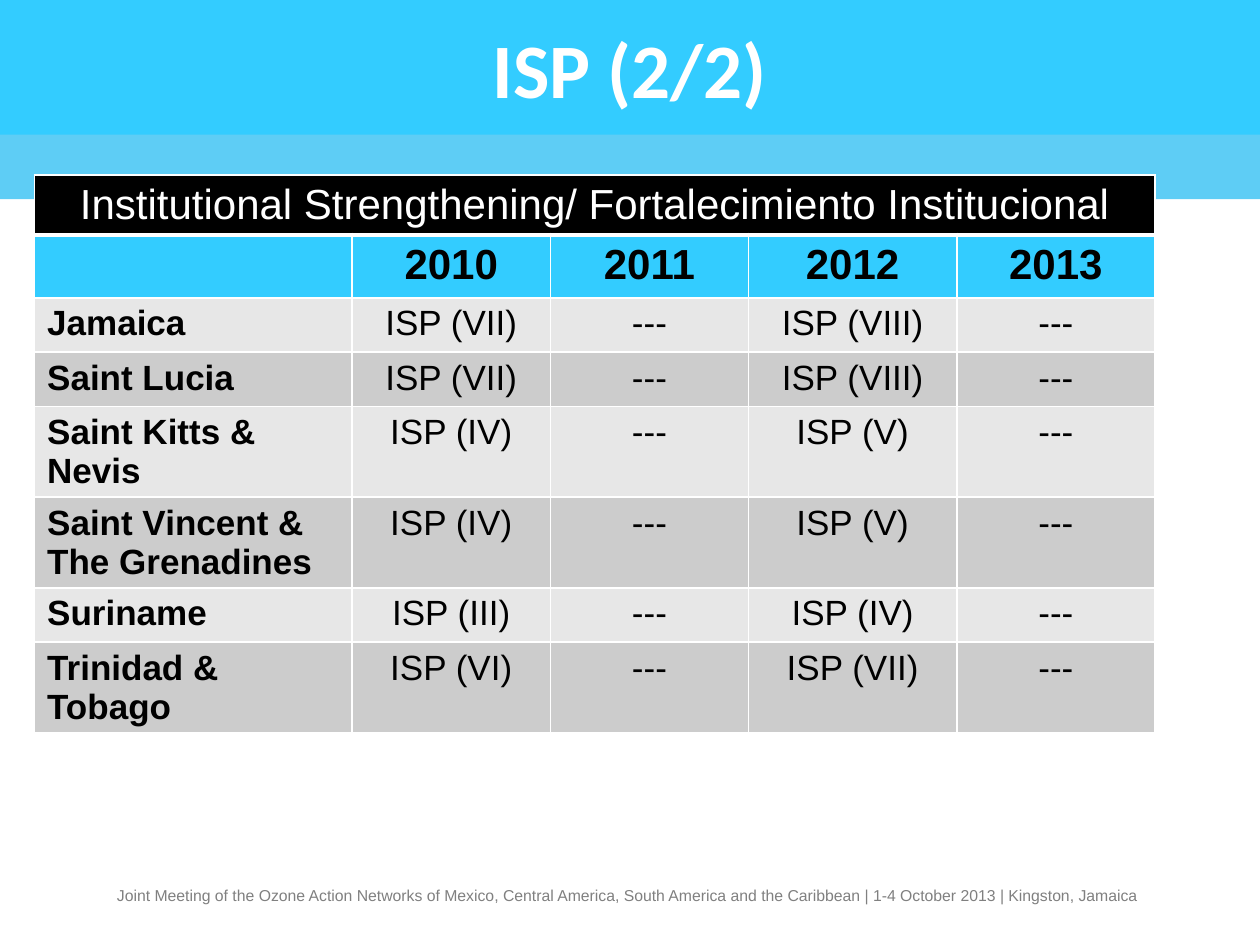
from dataclasses import dataclass

import pptx
import pptx.dml.color
import pptx.enum.shapes
import pptx.enum.text
import pptx.oxml
import pptx.oxml.ns
import pptx.util
from pptx.util import Pt

ALIGN = pptx.enum.text.PP_ALIGN
COLORS = {
    "band": "00B0F0", "sky": "33CCFF", "white": "FFFFFF", "black": "000000",
    "light": "E7E7E7", "dark": "CCCCCC", "grey": "808080",
}


@dataclass
class Country:
    name: str
    isp_2010: str
    isp_2012: str

    def row(self) -> list[str]:
        return [self.name, f"ISP ({self.isp_2010})", "---", f"ISP ({self.isp_2012})", "---"]


COUNTRIES = [
    Country("Jamaica", "VII", "VIII"),
    Country("Saint Lucia", "VII", "VIII"),
    Country("Saint Kitts & Nevis", "IV", "V"),
    Country("Saint Vincent & \vThe Grenadines", "IV", "V"),
    Country("Suriname", "III", "IV"),
    Country("Trinidad & Tobago", "VI", "VII"),
]
YEARS = ["", "2010", "2011", "2012", "2013"]
COL_WIDTHS = [181.5, 113.25, 113.25, 119, 113.25]
ROW_HEIGHTS = [34.25, 36] + [31] * len(COUNTRIES)


def rgb(name: str) -> pptx.dml.color.RGBColor:
    return pptx.dml.color.RGBColor.from_string(COLORS[name])


def fill_solid(obj, color: str) -> None:
    obj.fill.solid()
    obj.fill.fore_color.rgb = rgb(color)


def write(tf, text: str, *, size: float, color: str = "black", bold: bool = False,
          font: str = "Arial", align=ALIGN.LEFT) -> None:
    """Fill the first paragraph; a vertical tab marks a line break."""
    p = tf.paragraphs[0]
    p.alignment = align
    for i, line in enumerate(text.split("\v")):
        if i:
            p.add_line_break()
        r = p.add_run()
        r.text = line
        r.font.name, r.font.size, r.font.bold = font, Pt(size), bold
        r.font.color.rgb = rgb(color)


def set_borders(cell, bottom: float = 1) -> None:
    """White cell borders, placed ahead of the cell fill."""
    tc_pr = cell._tc.get_or_add_tcPr()
    widths = {"lnL": 1, "lnR": 1, "lnT": 1, "lnB": bottom}
    for i, (tag, width) in enumerate(widths.items()):
        tc_pr.insert(i, pptx.oxml.parse_xml(
            f'<a:{tag} {pptx.oxml.ns.nsdecls("a")} w="{Pt(width)}"><a:solidFill>'
            f'<a:srgbClr val="{COLORS["white"]}"/></a:solidFill></a:{tag}>'))


def draw_cell(cell, text: str, fill: str, *, bottom: float = 1, **fmt) -> None:
    fill_solid(cell, fill)
    set_borders(cell, bottom)
    if text:
        write(cell.text_frame, text, **fmt)


prs = pptx.Presentation()
prs.slide_width, prs.slide_height = Pt(720), Pt(540)
s = prs.slides.add_slide(prs.slide_layouts[5])
title = s.shapes.title

# Translucent band behind the title
band = s.shapes.add_shape(pptx.enum.shapes.MSO_SHAPE.RECTANGLE, 0, 0, Pt(720), Pt(113.75))
band.shadow.inherit = False
fill_solid(band, "band")
band.line.fill.background()
band_color = band.fill._xPr.find(".//" + pptx.oxml.ns.qn("a:srgbClr"))
band_color.append(pptx.oxml.parse_xml(
    f'<a:alpha {pptx.oxml.ns.nsdecls("a")} val="63000"/>'))
title.element.addprevious(band.element)

# Footer
footer = s.shapes.add_textbox(Pt(59.75), Pt(502.5), Pt(607), Pt(18))
footer.text_frame.word_wrap = True
write(footer.text_frame,
      "Joint Meeting of the Ozone Action Networks of Mexico, Central America, South America "
      "and the Caribbean | 1-4 October 2013 | Kingston, Jamaica", size=9, color="grey")
title.element.addprevious(footer.element)

# Title
title.left, title.top, title.width, title.height = 0, 0, Pt(720), Pt(77)
fill_solid(title, "sky")
title.text_frame.vertical_anchor = pptx.enum.text.MSO_ANCHOR.MIDDLE
write(title.text_frame, "ISP (2/2)", size=44, color="white", bold=True,
      font="Calibri", align=ALIGN.CENTER)

# Table grid
table = s.shapes.add_table(len(ROW_HEIGHTS), len(COL_WIDTHS), Pt(19.75), Pt(100),
                           Pt(sum(COL_WIDTHS)), Pt(sum(ROW_HEIGHTS))).table
for col, width in zip(table.columns, COL_WIDTHS):
    col.width = Pt(width)
for row, height in zip(table.rows, ROW_HEIGHTS):
    row.height = Pt(height)

# Table heading and years
table.cell(0, 0).merge(table.cell(0, len(COL_WIDTHS) - 1))
heading = ["Institutional Strengthening/ Fortalecimiento Institucional", "", "", "", ""]
for c, (text, year) in enumerate(zip(heading, YEARS)):
    draw_cell(table.cell(0, c), text, "black", bottom=3, size=24, color="white",
              align=ALIGN.CENTER)
    draw_cell(table.cell(1, c), year, "sky", size=24, bold=True, align=ALIGN.CENTER)

# Country rows in alternating greys
for i, country in enumerate(COUNTRIES):
    for c, text in enumerate(country.row()):
        draw_cell(table.cell(i + 2, c), text, "dark" if i % 2 else "light", size=20,
                  bold=c == 0, align=ALIGN.CENTER if c else ALIGN.LEFT)

prs.save("out.pptx")
